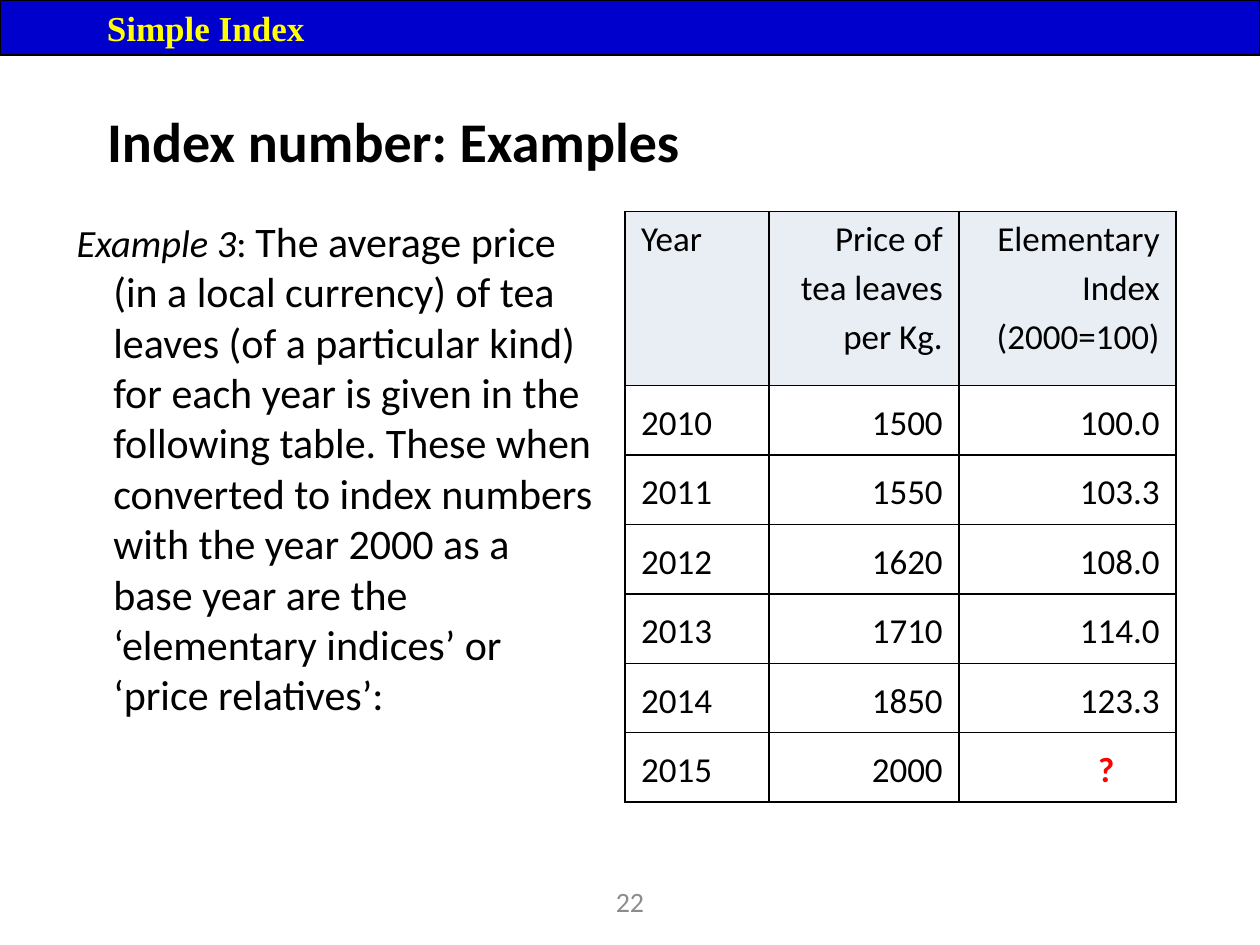
from pptx import Presentation
from pptx.dml.color import RGBColor
from pptx.enum import shapes, text
from pptx.oxml import parse_xml
from pptx.oxml.ns import nsdecls
from pptx.util import Pt

COLORS = {"black": "000000", "white": "FFFFFF", "bar": "0000CC", "bar text": "FFFF00",
          "header": "E9EDF4", "unknown": "FF0000", "number": "8C8C8C"}
LEFT, CENTER, RIGHT = text.PP_ALIGN.LEFT, text.PP_ALIGN.CENTER, text.PP_ALIGN.RIGHT
TOP, MIDDLE = text.MSO_ANCHOR.TOP, text.MSO_ANCHOR.MIDDLE


def add_span(para, words, size, color="black", bold=False, italic=False, font="Calibri"):
    span = para.add_run()
    span.text = words
    span.font.name, span.font.size = font, Pt(size)
    span.font.bold, span.font.italic = bold, italic
    span.font.color.rgb = RGBColor.from_string(COLORS[color])


def set_indent(para, left, first):
    props = para._p.get_or_add_pPr()
    props.set("marL", str(Pt(left)))
    props.set("indent", str(Pt(first)))


deck = Presentation()
deck.slide_width, deck.slide_height = Pt(720), Pt(540)
page = deck.slides.add_slide(deck.slide_layouts[5])

# Page number
box = page.shapes.add_textbox(Pt(246), Pt(500.5), Pt(228), Pt(28.8))
box.text_frame.word_wrap = True
box.text_frame.vertical_anchor = MIDDLE
para = box.text_frame.paragraphs[0]
para.alignment = CENTER
add_span(para, "22", 16, "number")

# Title
title = page.shapes.title
title.left, title.top, title.width, title.height = Pt(54), Pt(49), Pt(630), Pt(62.5)
title.text_frame.vertical_anchor = MIDDLE
para = title.text_frame.paragraphs[0]
para.alignment = LEFT
add_span(para, "Index number: Examples", 32, bold=True)

# Example text with a hanging indent
box = page.shapes.add_textbox(Pt(36.7), Pt(119.5), Pt(311.8), Pt(298))
box.text_frame.word_wrap = True
para = box.text_frame.paragraphs[0]
set_indent(para, 21, -21)
add_span(para, "Example 3", 22, italic=True)
add_span(para, ": ", 22)
add_span(para, "The average price (in a local currency) of tea leaves (of a particular kind) "
         "for each year is given in the following table. These when converted to index "
         "numbers with the year 2000 as a base year are the ‘elementary indices’ or "
         "‘price relatives’:", 24)

# Price table
rows = [
    ("Year", "Price of tea leaves per Kg.", "Elementary Index (2000=100)"),
    ("2010", "1500", "100.0"),
    ("2011", "1550", "103.3"),
    ("2012", "1620", "108.0"),
    ("2013", "1710", "114.0"),
    ("2014", "1850", "123.3"),
    ("2015", "2000", "?"),
]
widths = [82.2, 108.6, 124]
heights = [99.6] + [39.67] * 6
table = page.shapes.add_table(len(rows), len(widths), Pt(357.2), Pt(120.8),
                              Pt(sum(widths)), Pt(sum(heights))).table
for column, width in zip(table.columns, widths):
    column.width = Pt(width)
for row, height in zip(table.rows, heights):
    row.height = Pt(height)

for r, values in enumerate(rows):
    for c, value in enumerate(values):
        cell = table.cell(r, c)
        cell.margin_left = cell.margin_right = Pt(9.2)
        cell.margin_top = cell.margin_bottom = 0
        cell.vertical_anchor = MIDDLE if r else TOP
        para = cell.text_frame.paragraphs[0]
        para.alignment = RIGHT if c else LEFT
        para.line_spacing, para.space_before = 1.15, Pt(6)
        unknown = value == "?"
        if unknown:
            para.alignment = CENTER
            set_indent(para, 44.5, 0)
        add_span(para, value, 20, "unknown" if unknown else "black", bold=unknown)
        # Borders come before the fill in the cell properties
        for side in ("lnL", "lnR", "lnT", "lnB"):
            cell._tc.get_or_add_tcPr().append(parse_xml(
                f'<a:{side} {nsdecls("a")} w="{Pt(1)}"><a:solidFill>'
                f'<a:srgbClr val="{COLORS["black"]}"/></a:solidFill></a:{side}>'))
        cell.fill.solid()
        cell.fill.fore_color.rgb = RGBColor.from_string(COLORS["white" if r else "header"])

# Section bar
bar = page.shapes.add_shape(shapes.MSO_SHAPE.RECTANGLE, 0, 0, Pt(720), Pt(31.5))
bar.shadow.inherit = False
bar.fill.solid()
bar.fill.fore_color.rgb = RGBColor.from_string(COLORS["bar"])
bar.line.color.rgb = RGBColor.from_string(COLORS["black"])
bar.line.width = Pt(0.75)
bar.text_frame.vertical_anchor = TOP
para = bar.text_frame.paragraphs[0]
para.alignment = LEFT
set_indent(para, 0, 54)
add_span(para, "Simple Index", 20, "bar text", bold=True, font="Times New Roman")

deck.save("out.pptx")
